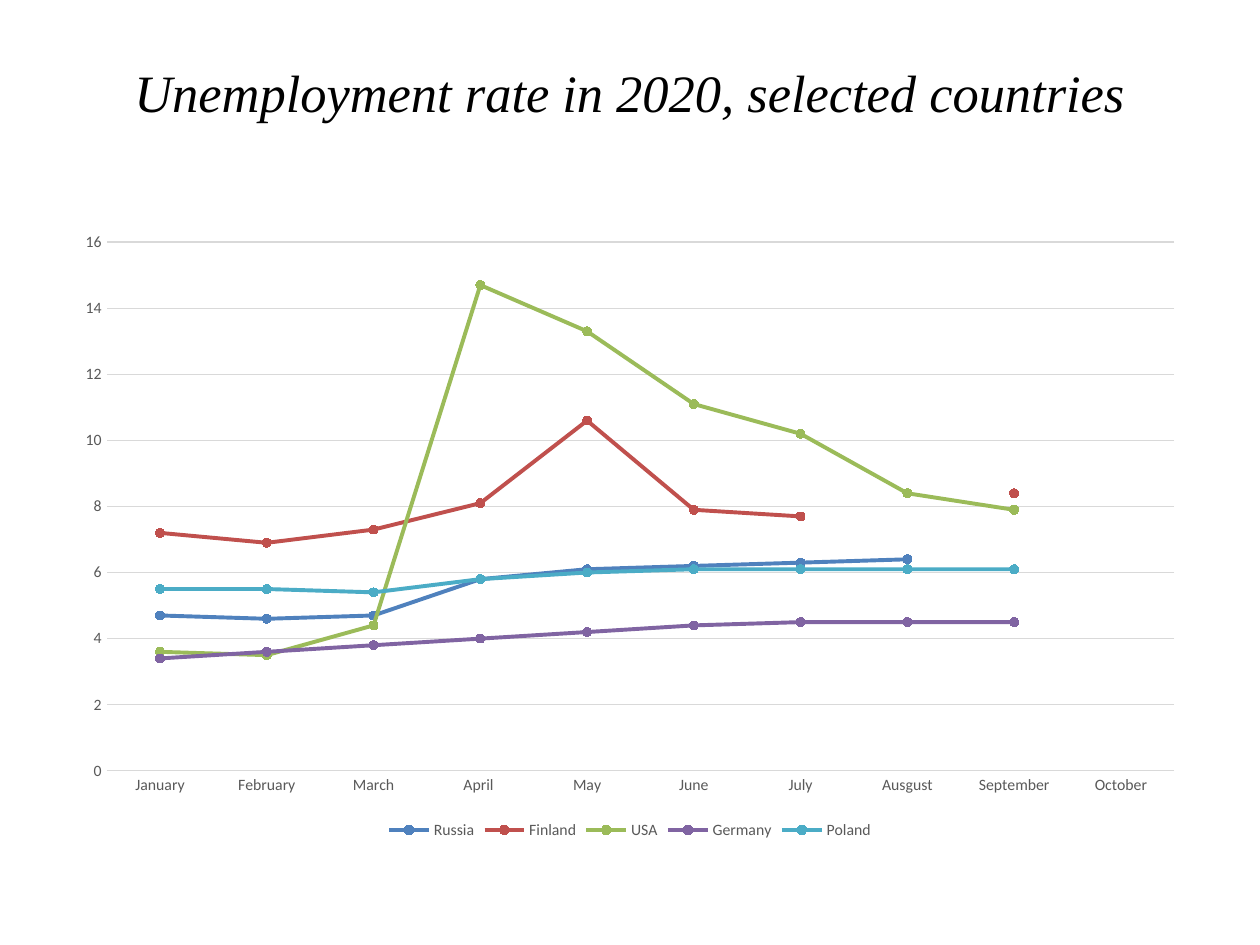
from pptx import Presentation
from pptx.chart.data import CategoryChartData
from pptx.dml.color import RGBColor
from pptx.enum.chart import (XL_CHART_TYPE, XL_LEGEND_POSITION,
                             XL_MARKER_STYLE, XL_TICK_MARK)
from pptx.enum.text import MSO_ANCHOR, PP_ALIGN
from pptx.util import Inches, Pt

PX = Inches(1) // 100  # 100 px to the inch

BLACK = RGBColor(0x00, 0x00, 0x00)
GRAY_TEXT = RGBColor(0x59, 0x59, 0x59)
GRAY_LINE = RGBColor(0xD9, 0xD9, 0xD9)
BLUE = RGBColor(0x4F, 0x81, 0xBD)
RED = RGBColor(0xC0, 0x50, 0x4D)
GREEN = RGBColor(0x9B, 0xBB, 0x59)
PURPLE = RGBColor(0x80, 0x64, 0xA2)
TEAL = RGBColor(0x4B, 0xAC, 0xC6)

MONTHS = ["January", "February", "March", "April ", "May", "June",
          "July", "Ausgust", "September", "October"]
COUNTRIES = [
    ("Russia", BLUE, [4.7, 4.6, 4.7, 5.8, 6.1, 6.2, 6.3, 6.4, None, None]),
    ("Finland", RED, [7.2, 6.9, 7.3, 8.1, 10.6, 7.9, 7.7, None, 8.4, None]),
    ("USA", GREEN, [3.6, 3.5, 4.4, 14.7, 13.3, 11.1, 10.2, 8.4, 7.9, None]),
    ("Germany", PURPLE, [3.4, 3.6, 3.8, 4, 4.2, 4.4, 4.5, 4.5, 4.5, None]),
    ("Poland", TEAL, [5.5, 5.5, 5.4, 5.8, 6, 6.1, 6.1, 6.1, 6.1, None]),
]


def style_font(font, name, size, color):
    font.name = name
    font.size = Pt(size)
    font.color.rgb = color


presentation = Presentation()
presentation.slide_width = 1000 * PX
presentation.slide_height = 750 * PX
slide = presentation.slides.add_slide(presentation.slide_layouts[5])

# Title
title = slide.shapes.title
title.left, title.top, title.width, title.height = (
    50 * PX, 30 * PX, 900 * PX, 85 * PX)
title.text_frame.text = "Unemployment rate in 2020, selected countries"
title.text_frame.vertical_anchor = MSO_ANCHOR.MIDDLE
paragraph = title.text_frame.paragraphs[0]
paragraph.alignment = PP_ALIGN.CENTER
style_font(paragraph.font, "Times New Roman", 30, BLACK)
paragraph.font.italic = True

# Line chart
chart_data = CategoryChartData()
chart_data.categories = MONTHS
for name, color, rates in COUNTRIES:
    chart_data.add_series(name, rates)
chart = slide.shapes.add_chart(
    XL_CHART_TYPE.LINE_MARKERS, 50 * PX, 175 * PX, 900 * PX, 495 * PX,
    chart_data).chart
chart.has_title = False
style_font(chart.font, "Calibri", 10, BLACK)
chart.plots[0].vary_by_categories = False

# Country lines and markers
for series, (name, color, rates) in zip(chart.plots[0].series, COUNTRIES):
    series.smooth = False
    series.format.line.color.rgb = color
    series.format.line.width = Pt(2.25)
    marker = series.marker
    marker.style = XL_MARKER_STYLE.CIRCLE
    marker.size = 5
    marker.format.fill.solid()
    marker.format.fill.fore_color.rgb = color
    marker.format.line.color.rgb = color

# Axes and gridlines
month_axis, rate_axis = chart.category_axis, chart.value_axis
for axis in (month_axis, rate_axis):
    axis.major_tick_mark = XL_TICK_MARK.NONE
    axis.minor_tick_mark = XL_TICK_MARK.NONE
    style_font(axis.tick_labels.font, "Calibri", 9, GRAY_TEXT)
rate_axis.minimum_scale = 0
rate_axis.maximum_scale = 16
rate_axis.major_unit = 2
rate_axis.has_major_gridlines = True
rate_axis.format.line.fill.background()
for line in (month_axis.format.line, rate_axis.major_gridlines.format.line):
    line.color.rgb = GRAY_LINE
    line.width = Pt(0.75)

# Legend
chart.has_legend = True
chart.legend.position = XL_LEGEND_POSITION.BOTTOM
chart.legend.include_in_layout = False
style_font(chart.legend.font, "Calibri", 9, GRAY_TEXT)

presentation.save("out.pptx")
